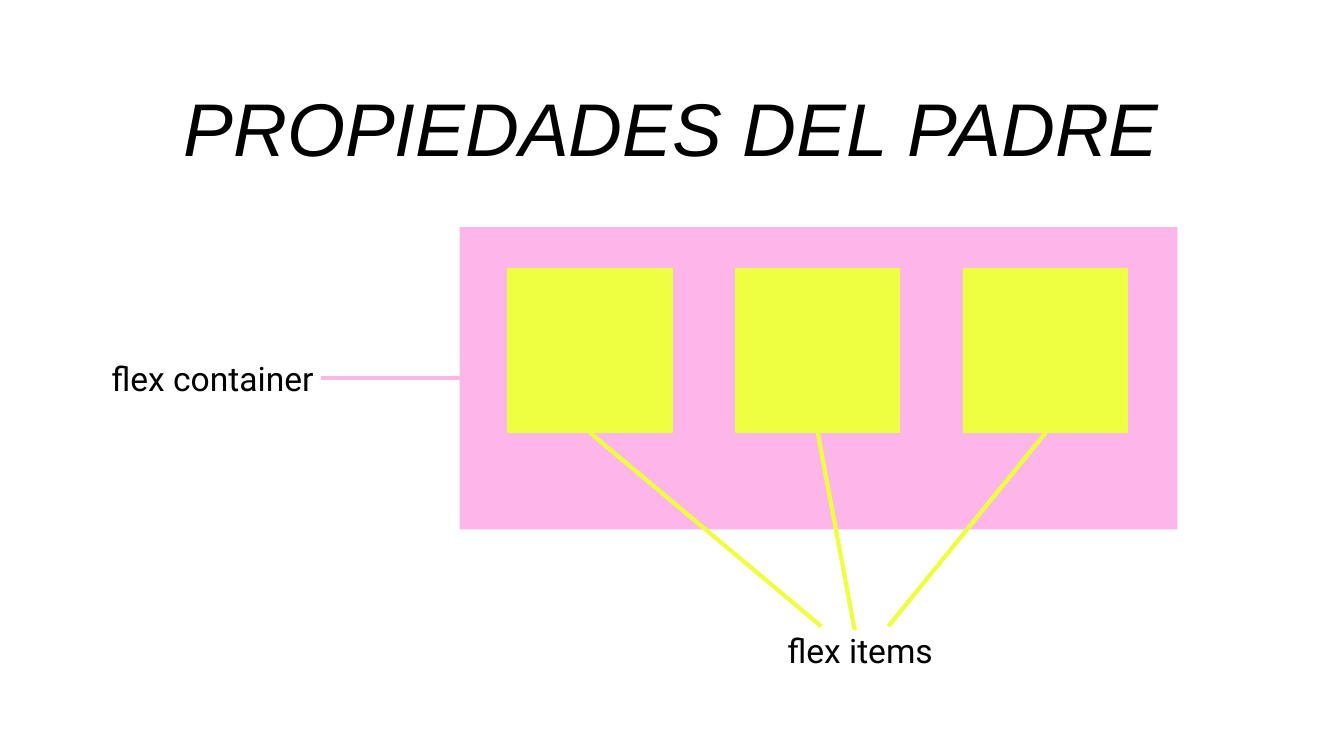
from dataclasses import dataclass

from lxml import etree
from pptx import Presentation
from pptx import util as u
from pptx.dml.color import RGBColor
from pptx.enum import shapes, text
from pptx.oxml.ns import qn

COLORS = {"black": "000000", "pink": "FCB6E8", "yellow": "EEFF41", "white": "FFFFFF"}
PAGE_WIDTH = 10
PAGE_HEIGHT = PAGE_WIDTH * 9 / 16


@dataclass(frozen=True)
class Area:
    left: float
    top: float
    width: float
    height: float

    def lengths(self) -> tuple:
        return tuple(u.Inches(v) for v in (self.left, self.top, self.width, self.height))


@dataclass(frozen=True)
class Link:
    start: tuple[float, float]
    end: tuple[float, float]
    color: str


@dataclass(frozen=True)
class Label:
    words: str
    area: Area


def rgb(name: str) -> RGBColor:
    return RGBColor.from_string(COLORS[name])


def write(box, words: str, *, font: str, size: float, italic=None, align=None,
          spacing=None, after=None, fit=text.MSO_AUTO_SIZE.NONE) -> None:
    frame = box.text_frame
    frame.word_wrap = True
    frame.auto_size = fit
    frame.vertical_anchor = text.MSO_ANCHOR.TOP
    for side in ("left", "top", "right", "bottom"):
        setattr(frame, f"margin_{side}", u.Inches(0.1))
    para = frame.paragraphs[0]
    para.alignment = align
    para.line_spacing = spacing
    para.space_after = after
    span = para.add_run()
    span.text = words
    span.font.name = font
    span.font.size = u.Pt(size)
    span.font.italic = italic
    span.font.color.rgb = rgb("black")


def draw_rectangle(page, area: Area, color: str, outlined: bool = False) -> None:
    box = page.shapes.add_shape(shapes.MSO_SHAPE.RECTANGLE, *area.lengths())
    box.shadow.inherit = False
    box.fill.solid()
    box.fill.fore_color.rgb = rgb(color)
    if outlined:
        box.line.color.rgb = rgb(color)
        box.line.width = u.Pt(0.75)
    else:
        box.line.fill.background()


def draw_link(page, link: Link) -> None:
    points = [u.Inches(v) for v in (*link.start, *link.end)]
    line = page.shapes.add_connector(shapes.MSO_CONNECTOR.STRAIGHT, *points)
    line.line.color.rgb = rgb(link.color)
    line.line.width = u.Pt(2.25)
    etree.SubElement(line._element.spPr, qn("a:effectLst"))


def draw_label(page, label: Label) -> None:
    box = page.shapes.add_textbox(*label.area.lengths())
    write(box, label.words, font="Roboto", size=18,
          fit=text.MSO_AUTO_SIZE.SHAPE_TO_FIT_TEXT)


# Flex diagram: a container, three evenly spaced items and their label lines
CONTAINER = Area(3.42, 1.69, 5.34, 2.25)
FIRST_ITEM, LAST_ITEM, ITEM_SIZE = 3.78, 7.17, 1.22
ITEM_STEP = (LAST_ITEM - FIRST_ITEM) / 2
ITEMS = [Area(FIRST_ITEM + i * ITEM_STEP, 2, ITEM_SIZE, ITEM_SIZE) for i in range(3)]
ITEM_LINK_ENDS = [(6.11, 4.66), (6.36, 4.69), (6.61, 4.66)]
ITEM_LINKS = [
    Link((item.left + item.width / 2, item.top + item.height), end, "yellow")
    for item, end in zip(ITEMS, ITEM_LINK_ENDS)
]
CONTAINER_MIDDLE = CONTAINER.top + CONTAINER.height / 2
CONTAINER_LINK = Link((CONTAINER.left, CONTAINER_MIDDLE), (2.39, CONTAINER_MIDDLE), "pink")
ITEMS_LABEL = Label("flex items", Area(5.76, 4.59, 1.53, 0.5))
CONTAINER_LABEL = Label("flex container", Area(0.73, 2.56, 1.82, 0.5))


def main() -> None:
    deck = Presentation()
    deck.slide_width, deck.slide_height = u.Inches(PAGE_WIDTH), u.Inches(PAGE_HEIGHT)
    page = deck.slides.add_slide(deck.slide_layouts[5])
    page.background.fill.solid()
    page.background.fill.fore_color.rgb = rgb("white")

    # Title
    title = page.shapes.title
    title.left, title.top, title.width, title.height = Area(1.1, 0.41, 7.79, 0.76).lengths()
    write(title, "PROPIEDADES DEL PADRE", font="Arial", size=40, italic=True,
          align=text.PP_ALIGN.CENTER, spacing=1.15, after=u.Pt(3))

    # Container and items
    draw_rectangle(page, CONTAINER, "pink")
    for item in ITEMS:
        draw_rectangle(page, item, "yellow", outlined=True)

    # Lines to the items and their label
    for link in ITEM_LINKS:
        draw_link(page, link)
    draw_label(page, ITEMS_LABEL)

    # Line to the container and its label
    draw_link(page, CONTAINER_LINK)
    draw_label(page, CONTAINER_LABEL)

    deck.save("out.pptx")


if __name__ == "__main__":
    main()
